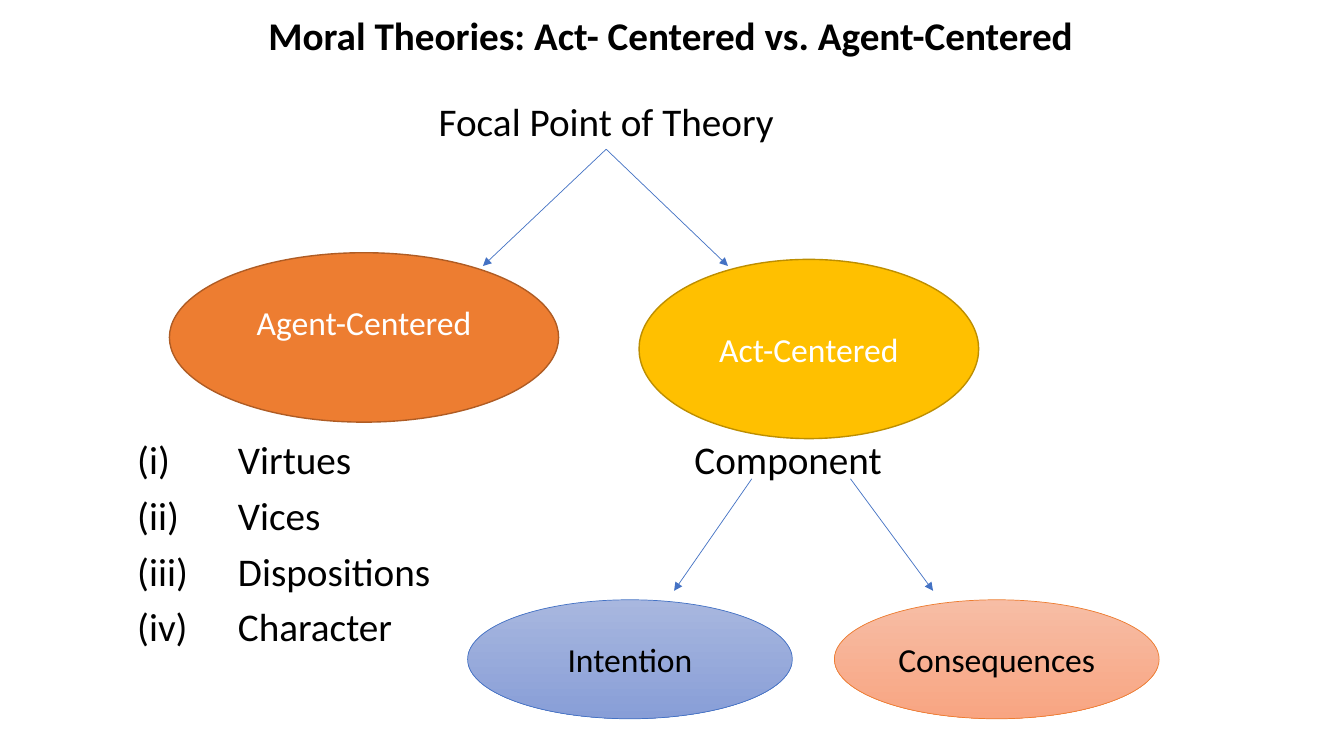
from pptx import Presentation
from pptx.dml.color import RGBColor
from pptx.enum.shapes import MSO_CONNECTOR, MSO_SHAPE
from pptx.enum.text import MSO_ANCHOR, MSO_AUTO_SIZE, PP_ALIGN
from pptx.oxml.ns import qn
from pptx.util import Pt
from lxml.etree import SubElement

# Content
FONT = "Calibri"
HEX = {
    "black": "000000", "white": "FFFFFF", "blue": "4472C4",
    "orange": "ED7D31", "rust": "AF5C24", "gold": "FFC000", "olive": "BD8E00",
    "sky": "A8B7DF", "steel": "889ED7", "peach": "F7BDA5", "coral": "F8A582",
}
TITLE = "Moral Theories: Act- Centered vs. Agent-Centered"
TRAITS = [("(i)", "Virtues"), ("(ii)", "Vices"),
          ("(iii)", "Dispositions"), ("(iv)", "Character")]
# text, (left, top, width, height)
LABELS = [("Focal Point of Theory", (303, 73, 260, 33.6)),
          ("Component", (483, 315, 160, 33.6))]
# text, box, fills, line, line width, text colour, bottom inset
OVALS = [
    ("Agent-Centered", (121, 180.5, 278, 121), ["orange"], "rust", 1, "white", 25.6),
    ("Act-Centered", (456.5, 185.3, 242.6, 128), ["gold"], "olive", 1, "white", 3.6),
    ("Intention", (334, 428.4, 232, 85), ["sky", "steel"], "blue", 0.5, "black", 3.6),
    ("Consequences", (596, 428.4, 232, 85), ["peach", "coral"], "orange", 0.5, "black", 3.6),
]
# start, end, whether it starts at the focal label
ARROWS = [
    ((433, 106.6), (345, 190), True),
    ((433, 106.6), (520, 190), True),
    ((537, 342), (481.5, 422), False),
    ((607.5, 342), (666.5, 422), False),
]


def rgb(name):
    return RGBColor.from_string(HEX[name])


def place(shape, box):
    shape.left, shape.top, shape.width, shape.height = map(Pt, box)


def style(shape, size, color="black", bold=False, align=PP_ALIGN.CENTER,
          anchor=MSO_ANCHOR.MIDDLE, inset=0, space=1.0):
    frame = shape.text_frame
    frame.word_wrap = True
    frame.auto_size = MSO_AUTO_SIZE.NONE
    frame.vertical_anchor = anchor
    frame.margin_left = frame.margin_right = Pt(0)
    frame.margin_top = frame.margin_bottom = Pt(inset)
    for para in frame.paragraphs:
        para.alignment = align
        para.line_spacing = space
        for run in para.runs:
            run.font.name = FONT
            run.font.size = Pt(size)
            run.font.bold = bold
            run.font.color.rgb = rgb(color)


deck = Presentation()
deck.slide_width, deck.slide_height = Pt(960), Pt(540)
slide = deck.slides.add_slide(deck.slide_layouts[1])
shapes = slide.shapes

# Title
title = shapes.title
place(title, (130, 7, 698, 40))
title.text_frame.text = TITLE
style(title, 28, bold=True, space=0.9)

# List of traits with hanging numerals
traits = slide.placeholders[1]
place(traits, (98, 315, 230, 165))
traits.text_frame.text = "\n".join(f"{mark}\t{name}" for mark, name in TRAITS)
style(traits, 28, align=PP_ALIGN.LEFT, anchor=MSO_ANCHOR.TOP, space=0.9)
for para in traits.text_frame.paragraphs:
    para.space_before = Pt(9.5)
    props = para._p.get_or_add_pPr()
    props.set("marL", str(Pt(72)))
    props.set("indent", str(Pt(-72)))
    SubElement(props, qn("a:buNone"))

# Labels
labels = []
for text, box in LABELS:
    label = shapes.add_textbox(*map(Pt, box))
    label.text_frame.text = text
    style(label, 28, anchor=MSO_ANCHOR.TOP, space=0.9)
    labels.append(label)

# Ovals
for text, box, fills, edge, width, color, bottom in OVALS:
    oval = shapes.add_shape(MSO_SHAPE.OVAL, *map(Pt, box))
    oval.shadow.inherit = False
    if len(fills) == 1:
        oval.fill.solid()
        oval.fill.fore_color.rgb = rgb(fills[0])
    else:
        oval.fill.gradient()
        oval.fill.gradient_angle = 270
        for stop, name in zip(oval.fill.gradient_stops, fills):
            stop.color.rgb = rgb(name)
    oval.line.color.rgb = rgb(edge)
    oval.line.width = Pt(width)
    oval.text_frame.text = text
    style(oval, 24, color, inset=3.6)
    oval.text_frame.margin_bottom = Pt(bottom)

# Arrows
for start, end, joined in ARROWS:
    arrow = shapes.add_connector(MSO_CONNECTOR.STRAIGHT, *map(Pt, start + end))
    if joined:
        arrow.begin_connect(labels[0], 2)
    arrow.line.color.rgb = rgb("blue")
    arrow.line.width = Pt(0.5)
    SubElement(arrow.line._get_or_add_ln(), qn("a:tailEnd"), type="triangle")
    SubElement(arrow._element.spPr, qn("a:effectLst"))

deck.save("out.pptx")
